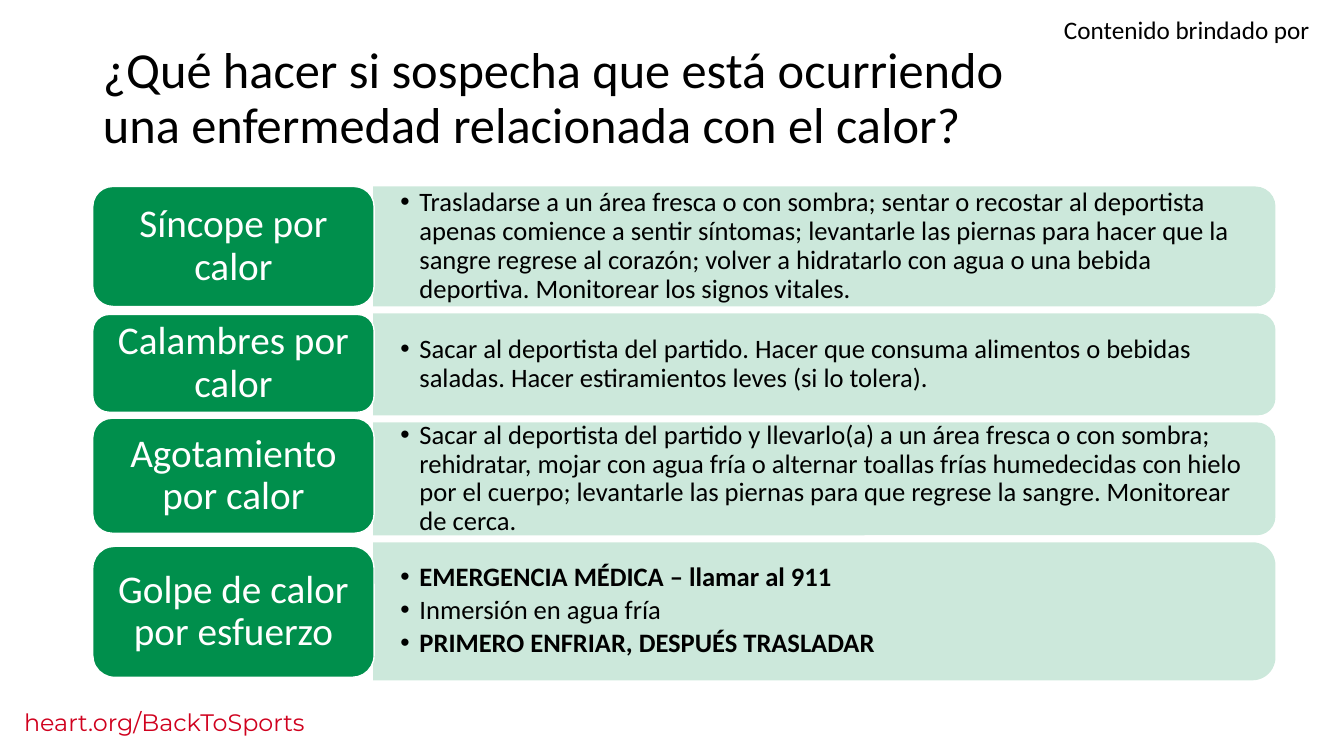
from dataclasses import dataclass

from lxml import etree
from pptx import Presentation
from pptx.dml.color import RGBColor
from pptx.enum.shapes import MSO_SHAPE
from pptx.enum.text import MSO_ANCHOR, MSO_AUTO_SIZE, PP_ALIGN
from pptx.oxml.ns import qn
from pptx.util import Inches, Pt

ROUNDED = MSO_SHAPE.ROUNDED_RECTANGLE
TWO_ROUNDED = MSO_SHAPE.ROUND_2_SAME_RECTANGLE
TOP, MIDDLE = MSO_ANCHOR.TOP, MSO_ANCHOR.MIDDLE
LEFT, CENTER = PP_ALIGN.LEFT, PP_ALIGN.CENTER
NO_AUTOFIT = MSO_AUTO_SIZE.NONE

GREEN, WHITE, BLACK, RED = "008F4C", "FFFFFF", "000000", "D0011E"
TITLE_ONLY = 5

CONDITION_LEFT, CONDITION_WIDTH = 0.92, 2.79
ADVICE_LEFT, ADVICE_WIDTH, ADVICE_TEXT_WIDTH = 3.7, 8.95, 8.89
FIRST_TOP, ROW_GAP = 1.85, 0.07
BULLET_INDENT = 0.19


@dataclass
class Step:
    text: str
    bold: bool = False


@dataclass
class Condition:
    name: str
    top: float
    height: float
    advice_height: float
    steps: list[Step]


@dataclass
class Style:
    size: float
    color: str = BLACK
    font: str = "Calibri"
    align: int = LEFT
    spacing: float = 1.0
    after: float = 0
    anchor: int = TOP
    margins: tuple[float, float] = (0.1, 0.05)
    bulleted: bool = False


CONDITIONS = [
    Condition("Síncope por calor", 1.85, 1.19, 1.19, [
        Step("Trasladarse a un área fresca o con sombra; sentar o recostar al "
             "deportista apenas comience a sentir síntomas; levantarle las piernas "
             "para hacer que la sangre regrese al corazón; volver a hidratarlo con "
             "agua o una bebida deportiva. Monitorear los signos vitales."),
    ]),
    Condition("Calambres por calor", 3.12, 0.97, 1.01, [
        Step("Sacar al deportista del partido. Hacer que consuma alimentos o "
             "bebidas saladas. Hacer estiramientos leves (si lo tolera)."),
    ]),
    Condition("Agotamiento por calor", 4.15, 1.14, 1.12, [
        Step("Sacar al deportista del partido y llevarlo(a) a un área fresca o con "
             "sombra; rehidratar, mojar con agua fría o alternar toallas frías "
             "humedecidas con hielo por el cuerpo; levantarle las piernas para que "
             "regrese la sangre. Monitorear de cerca."),
    ]),
    Condition("Golpe de calor por esfuerzo", 5.42, 1.3, 1.37, [
        Step("EMERGENCIA MÉDICA – llamar al 911", bold=True),
        Step("Inmersión en agua fría"),
        Step("PRIMERO ENFRIAR, DESPUÉS TRASLADAR", bold=True),
    ]),
]

TITLE_STYLE = Style(36, spacing=0.9)
SITE_STYLE = Style(17, RED, "Montserrat")
CREDIT_STYLE = Style(18, align=CENTER)
CONDITION_STYLE = Style(28, WHITE, align=CENTER, spacing=0.9, anchor=MIDDLE,
                        margins=(0.12, 0.06))
ADVICE_STYLE = Style(19, spacing=0.9, after=3, anchor=MIDDLE,
                     margins=(0.27, 0), bulleted=True)


def rgb(color: str) -> RGBColor:
    return RGBColor.from_string(color)


def apply(target, values: dict) -> None:
    for name, value in values.items():
        setattr(target, name, value)


def place(shape, left: float, top: float, width: float, height: float) -> None:
    apply(shape, {"left": Inches(left), "top": Inches(top),
                  "width": Inches(width), "height": Inches(height)})


def add_bullet(paragraph) -> None:
    properties = paragraph._p.get_or_add_pPr()
    properties.set("marL", str(Inches(BULLET_INDENT)))
    properties.set("indent", str(-Inches(BULLET_INDENT)))
    etree.SubElement(properties, qn("a:buFont")).set("typeface", "Arial")
    etree.SubElement(properties, qn("a:buChar")).set("char", "•")


def write(shape, steps: list[Step], style: Style) -> None:
    frame = shape.text_frame
    side, edge = (Inches(margin) for margin in style.margins)
    apply(frame, {"word_wrap": True, "auto_size": NO_AUTOFIT,
                  "vertical_anchor": style.anchor,
                  "margin_left": side, "margin_right": side,
                  "margin_top": edge, "margin_bottom": edge})
    for index, step in enumerate(steps):
        paragraph = frame.add_paragraph() if index else frame.paragraphs[0]
        if style.bulleted:
            add_bullet(paragraph)
        apply(paragraph, {"alignment": style.align, "line_spacing": style.spacing,
                          "space_before": Pt(0), "space_after": Pt(style.after)})
        run = paragraph.add_run()
        run.text = step.text
        apply(run.font, {"name": style.font, "size": Pt(style.size),
                         "bold": step.bold})
        run.font.color.rgb = rgb(style.color)


def add_text(slide, box: tuple[float, float, float, float],
             steps: list[Step], style: Style) -> None:
    write(slide.shapes.add_textbox(*map(Inches, box)), steps, style)


def add_green_shape(slide, kind, left: float, top: float,
                    width: float, height: float):
    shape = slide.shapes.add_shape(kind, *map(Inches, (left, top, width, height)))
    shape.shadow.inherit = False
    shape.fill.solid()
    shape.fill.fore_color.rgb = rgb(GREEN)
    return shape


def add_advice(slide, condition: Condition, top: float) -> None:
    # The panel is turned a quarter so that its rounded corners face right
    height = condition.advice_height
    shift = (ADVICE_WIDTH - height) / 2
    panel = add_green_shape(slide, TWO_ROUNDED, ADVICE_LEFT + shift, top - shift,
                            height, ADVICE_WIDTH)
    panel.rotation = 90
    panel.line.fill.background()
    tint = panel.fill._xPr.find(qn("a:solidFill"))[0]
    etree.SubElement(tint, qn("a:alpha")).set("val", "20000")
    add_text(slide, (ADVICE_LEFT, top, ADVICE_TEXT_WIDTH, height),
             condition.steps, ADVICE_STYLE)


def add_condition(slide, condition: Condition) -> None:
    label = add_green_shape(slide, ROUNDED, CONDITION_LEFT, condition.top,
                            CONDITION_WIDTH, condition.height)
    label.line.color.rgb = rgb(WHITE)
    label.line.width = Pt(1)
    write(label, [Step(condition.name)], CONDITION_STYLE)


def main() -> None:
    presentation = Presentation()
    apply(presentation, {"slide_width": Inches(13.33), "slide_height": Inches(7.5)})
    slide = presentation.slides.add_slide(presentation.slide_layouts[TITLE_ONLY])

    # Site address and credit
    add_text(slide, (0.14, 6.97, 4.33, 0.39),
             [Step("heart.org/BackToSports")], SITE_STYLE)
    add_text(slide, (10.38, 0.09, 2.78, 0.4),
             [Step("Contenido brindado por")], CREDIT_STYLE)

    # Title
    title = slide.shapes.title
    place(title, 0.92, 0.4, 9.86, 0.83)
    write(title, [Step("¿Qué hacer si sospecha que está ocurriendo una "
                       "enfermedad relacionada con el calor?")], TITLE_STYLE)

    # Conditions with their advice, stacked with equal gaps
    advice_top = FIRST_TOP
    for condition in CONDITIONS:
        add_advice(slide, condition, advice_top)
        add_condition(slide, condition)
        advice_top += condition.advice_height + ROW_GAP

    presentation.save("out.pptx")


if __name__ == "__main__":
    main()
